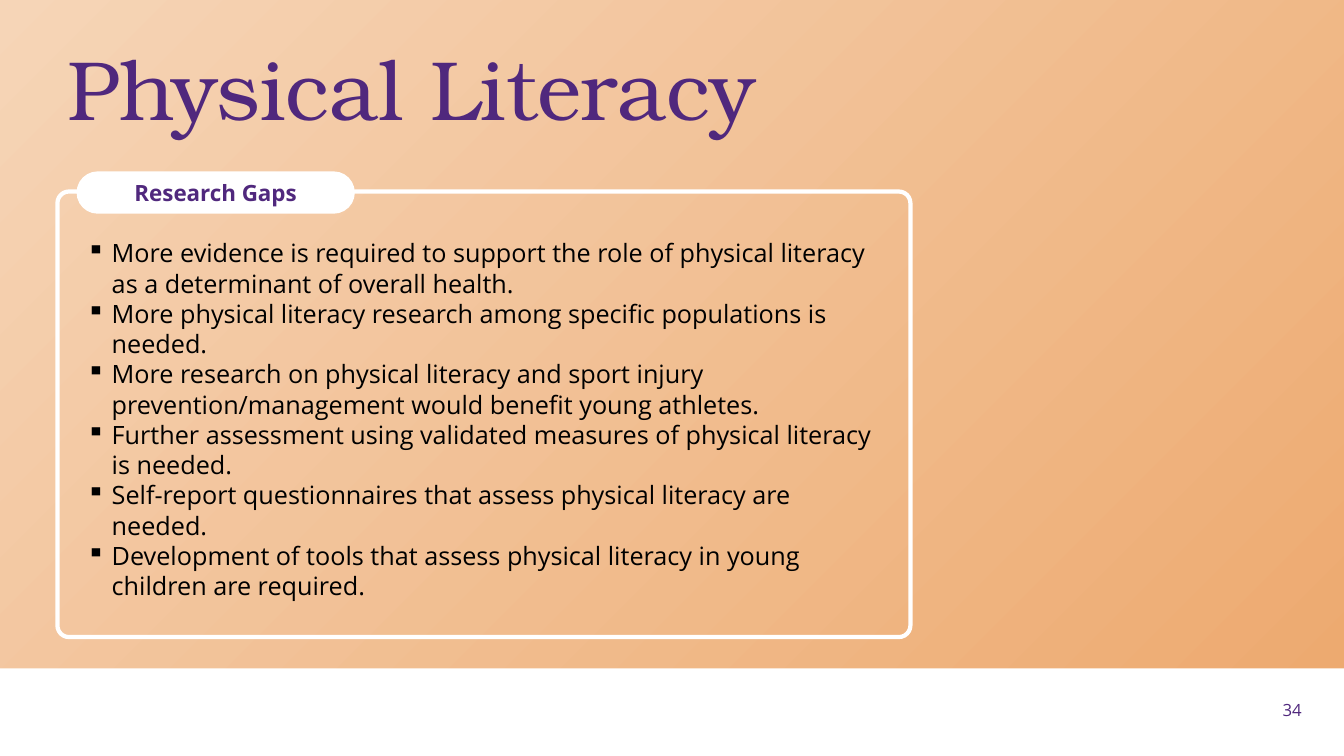
from dataclasses import dataclass

from lxml import etree
from pptx import Presentation
from pptx.dml.color import RGBColor
from pptx.enum.shapes import MSO_SHAPE
from pptx.enum.text import MSO_ANCHOR, PP_ALIGN
from pptx.oxml import parse_xml
from pptx.oxml.ns import nsdecls, qn
from pptx.shapes.autoshape import Shape
from pptx.slide import Slide
from pptx.util import Inches, Pt

COLORS = {
    "purple": "50287D",
    "black": "000000",
    "white": "FFFFFF",
    "orange": "EDAA70",
    "peach": "F6D5B7",
}
SANS = "Open Sans"
SERIF = "TeX Gyre Bonum"
GAPS = (
    "More evidence is required to support the role of physical literacy as a determinant of overall health.",
    "More physical literacy research among specific populations is needed.",
    "More research on physical literacy and sport injury prevention/management would benefit young athletes.",
    "Further assessment using validated measures of physical literacy is needed.",
    "Self-report questionnaires that assess physical literacy are needed.",
    "Development of tools that assess physical literacy in young children are required.",
)


@dataclass(frozen=True)
class Box:
    left: float
    top: float
    width: float
    height: float

    def lengths(self) -> tuple[Inches, ...]:
        return tuple(Inches(v) for v in (self.left, self.top, self.width, self.height))


@dataclass(frozen=True)
class Panel:
    box: Box
    fill: str | None = None
    line: str | None = None
    radius: float | None = None


@dataclass(frozen=True)
class TextStyle:
    size: float
    color: str = "purple"
    font: str = SANS
    bold: bool = False
    align: PP_ALIGN = PP_ALIGN.LEFT
    anchor: MSO_ANCHOR = MSO_ANCHOR.MIDDLE
    spacing: float | None = None
    bullet: str | None = None


def rgb(name: str) -> RGBColor:
    return RGBColor.from_string(COLORS[name])


def add_panel(s: Slide, panel: Panel) -> Shape:
    kind = MSO_SHAPE.RECTANGLE if panel.radius is None else MSO_SHAPE.ROUNDED_RECTANGLE
    sp = s.shapes.add_shape(kind, *panel.box.lengths())
    sp.shadow.inherit = False
    if panel.radius is not None:
        sp.adjustments[0] = panel.radius
    if panel.fill:
        sp.fill.solid()
        sp.fill.fore_color.rgb = rgb(panel.fill)
    else:
        sp.fill.background()
    if panel.line:
        sp.line.color.rgb = rgb(panel.line)
        sp.line.width = Pt(3)
    else:
        sp.line.fill.background()
    return sp


def set_corner_glow(sp: Shape, inner: str, outer: str) -> None:
    sp.fill.gradient()
    for stop, name, position in zip(sp.fill.gradient_stops, (inner, outer), (0, 1)):
        stop.color.rgb = rgb(name)
        stop.position = position
    grad = sp._element.spPr.find(qn("a:gradFill"))
    glow = parse_xml(
        f'<a:path {nsdecls("a")} path="circle">'
        '<a:fillToRect l="100000" t="100000"/></a:path>'
    )
    grad.replace(grad.find(qn("a:lin")), glow)


def write(sp: Shape, style: TextStyle, *lines: str) -> None:
    tf = sp.text_frame
    tf.word_wrap = True
    tf.vertical_anchor = style.anchor
    for i, line in enumerate(lines):
        p = tf.add_paragraph() if i else tf.paragraphs[0]
        p.alignment = style.align
        if style.spacing:
            p.line_spacing = Pt(style.spacing)
        if style.bullet:
            pPr = p._p.get_or_add_pPr()
            pPr.set("marL", str(Inches(0.25)))
            pPr.set("indent", str(-Inches(0.25)))
            etree.SubElement(pPr, qn("a:buChar")).set("char", style.bullet)
        r = p.add_run()
        r.text = line
        r.font.name = style.font
        r.font.size = Pt(style.size)
        r.font.bold = style.bold
        r.font.color.rgb = rgb(style.color)


def add_text(s: Slide, box: Box, style: TextStyle, *lines: str) -> None:
    write(s.shapes.add_textbox(*box.lengths()), style, *lines)


def main() -> None:
    prs = Presentation()
    prs.slide_width, prs.slide_height = Inches(13.33), Inches(7.5)
    s = prs.slides.add_slide(prs.slide_layouts[6])

    backdrop = add_panel(s, Panel(Box(0, 0, 13.33, 6.63)))
    set_corner_glow(backdrop, "orange", "peach")
    add_panel(s, Panel(Box(0, 6.63, 13.33, 0.87), fill="white"))
    add_text(s, Box(12.54, 6.84, 0.47, 0.4), TextStyle(12, align=PP_ALIGN.RIGHT), "34")
    add_text(s, Box(0.57, 0.26, 11.5, 1.45), TextStyle(60, font=SERIF, spacing=55), "Physical Literacy")

    add_panel(s, Panel(Box(0.57, 1.9, 8.46, 4.42), line="white", radius=0.026))
    gap_style = TextStyle(18, "black", anchor=MSO_ANCHOR.TOP, spacing=21.6, bullet="▪")
    add_text(s, Box(0.76, 2.31, 8.18, 2.96), gap_style, *GAPS)
    heading = add_panel(s, Panel(Box(0.76, 1.7, 2.76, 0.42), fill="white", radius=0.5))
    write(heading, TextStyle(16, bold=True, align=PP_ALIGN.CENTER), "Research Gaps")

    prs.save("out.pptx")


if __name__ == "__main__":
    main()
